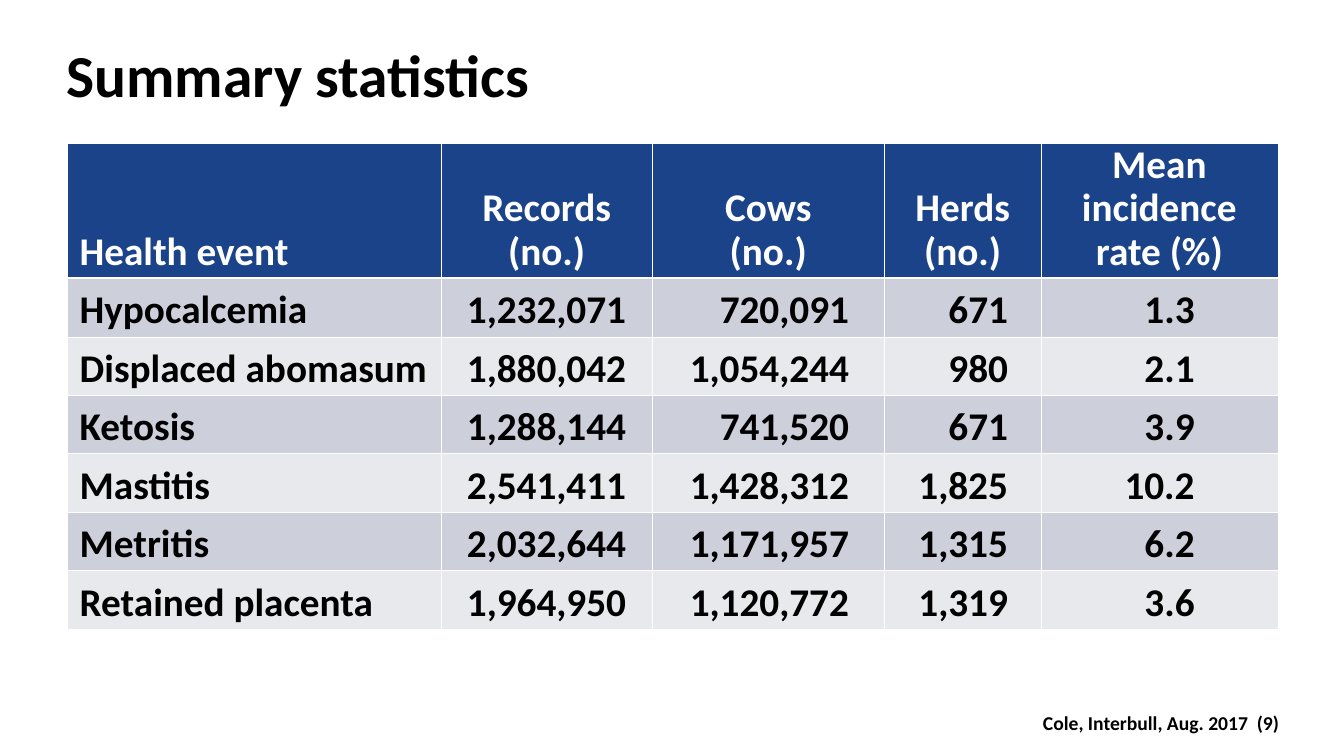
from dataclasses import dataclass

from lxml import etree
from pptx import Presentation
from pptx.dml.color import RGBColor
from pptx.enum.text import MSO_ANCHOR, PP_ALIGN
from pptx.oxml.ns import qn
from pptx.util import Inches, Pt

LEFT, CENTER, RIGHT = PP_ALIGN.LEFT, PP_ALIGN.CENTER, PP_ALIGN.RIGHT
BOTTOM = MSO_ANCHOR.BOTTOM

FONT = "Calibri"
COLORS = {
    "text": "000000",
    "white": "FFFFFF",
    "header": "1B4389",
    "odd": "CDCFDA",
    "even": "E8E9ED",
}
HEADER_HEIGHT, BODY_HEIGHT = 2.68, 1.16
HEADER_SPACING, BODY_SPACING = 62, 76
CELL_SIZE = 56
THIN, THICK = 1, 3


@dataclass
class Column:
    heading: str
    width: float
    align: PP_ALIGN
    right_margin: float


COLUMNS = [
    Column("Health event", 7.42, LEFT, 0.25),
    Column("Records\n(no.)", 4.18, CENTER, 0.25),
    Column("Cows\n(no.)", 4.61, RIGHT, 0.7),
    Column("Herds\n(no.)", 3.1, RIGHT, 0.65),
    Column("Mean incidence\nrate (%)", 4.7, RIGHT, 1.65),
]
EVENTS = [
    ("Hypocalcemia", "1,232,071", "720,091", "671", "1.3"),
    ("Displaced abomasum", "1,880,042", "1,054,244", "980", "2.1"),
    ("Ketosis", "1,288,144", "741,520", "671", "3.9"),
    ("Mastitis", "2,541,411", "1,428,312", "1,825", "10.2"),
    ("Metritis", "2,032,644", "1,171,957", "1,315", "6.2"),
    ("Retained placenta", "1,964,950", "1,120,772", "1,319", "3.6"),
]


def format_text(tf, size: float, color: str, align: PP_ALIGN) -> None:
    for p in tf.paragraphs:
        p.alignment = align
        for r in p.runs:
            r.font.name = FONT
            r.font.size = Pt(size)
            r.font.bold = True
            r.font.color.rgb = RGBColor.from_string(COLORS[color])


def add_text(s, text: str, left: float, top: float, width: float, height: float,
             size: float, align: PP_ALIGN, wrap: bool):
    box = s.shapes.add_textbox(Inches(left), Inches(top), Inches(width), Inches(height))
    tf = box.text_frame
    tf.word_wrap = wrap
    tf.text = text
    format_text(tf, size, "text", align)
    return tf


def set_borders(cell, top: float, bottom: float) -> None:
    tc_pr = cell._tc.get_or_add_tcPr()
    for side, width in (("L", THIN), ("R", THIN), ("T", top), ("B", bottom)):
        ln = etree.SubElement(tc_pr, qn(f"a:ln{side}"), w=str(Pt(width)))
        fill = etree.SubElement(ln, qn("a:solidFill"))
        etree.SubElement(fill, qn("a:srgbClr"), val=COLORS["white"])


def fill_cell(cell, text: str, fill: str, color: str, align: PP_ALIGN,
              right_margin: float, spacing: float) -> None:
    cell.fill.solid()
    cell.fill.fore_color.rgb = RGBColor.from_string(COLORS[fill])
    cell.vertical_anchor = BOTTOM
    cell.margin_left, cell.margin_right = Inches(0.25), Inches(right_margin)
    cell.margin_top = cell.margin_bottom = Inches(0.05)
    cell.text_frame.text = text
    format_text(cell.text_frame, CELL_SIZE, color, align)
    for p in cell.text_frame.paragraphs:
        p.line_spacing = Pt(spacing)


def add_event_table(s) -> None:
    height = HEADER_HEIGHT + BODY_HEIGHT * len(EVENTS)
    table = s.shapes.add_table(len(EVENTS) + 1, len(COLUMNS), Inches(1.33), Inches(2.84),
                               Inches(24), Inches(height)).table
    for i, row in enumerate(table.rows):
        row.height = Inches(BODY_HEIGHT if i else HEADER_HEIGHT)

    for j, column in enumerate(COLUMNS):
        table.columns[j].width = Inches(column.width)

        # Header cell
        cell = table.cell(0, j)
        set_borders(cell, THIN, THICK)
        fill_cell(cell, column.heading, "header", "white", CENTER if j else LEFT,
                  0.25, HEADER_SPACING)

        # Body cells in alternating bands
        for i, event in enumerate(EVENTS, start=1):
            cell = table.cell(i, j)
            set_borders(cell, THICK if i == 1 else THIN, THIN)
            fill_cell(cell, event[j], "odd" if i % 2 else "even", "text", column.align,
                      column.right_margin, BODY_SPACING)


def main() -> None:
    prs = Presentation()
    prs.slide_width, prs.slide_height = Inches(26.65), Inches(15)
    s = prs.slides.add_slide(prs.slide_layouts[6])

    # Footer
    add_text(s, "Cole, Interbull, Aug. 2017\u00a0 (9)".replace("\u00a0", " "),
             20.11, 14.06, 5.35, 0.57, 28, RIGHT, False)

    # Title
    tf = add_text(s, "Summary statistics", 1.32, 0.75, 24, 1.43, 85, LEFT, True)
    tf.margin_left = tf.margin_right = tf.margin_top = tf.margin_bottom = 0

    # Health event statistics
    add_event_table(s)

    prs.save("out.pptx")


if __name__ == "__main__":
    main()
